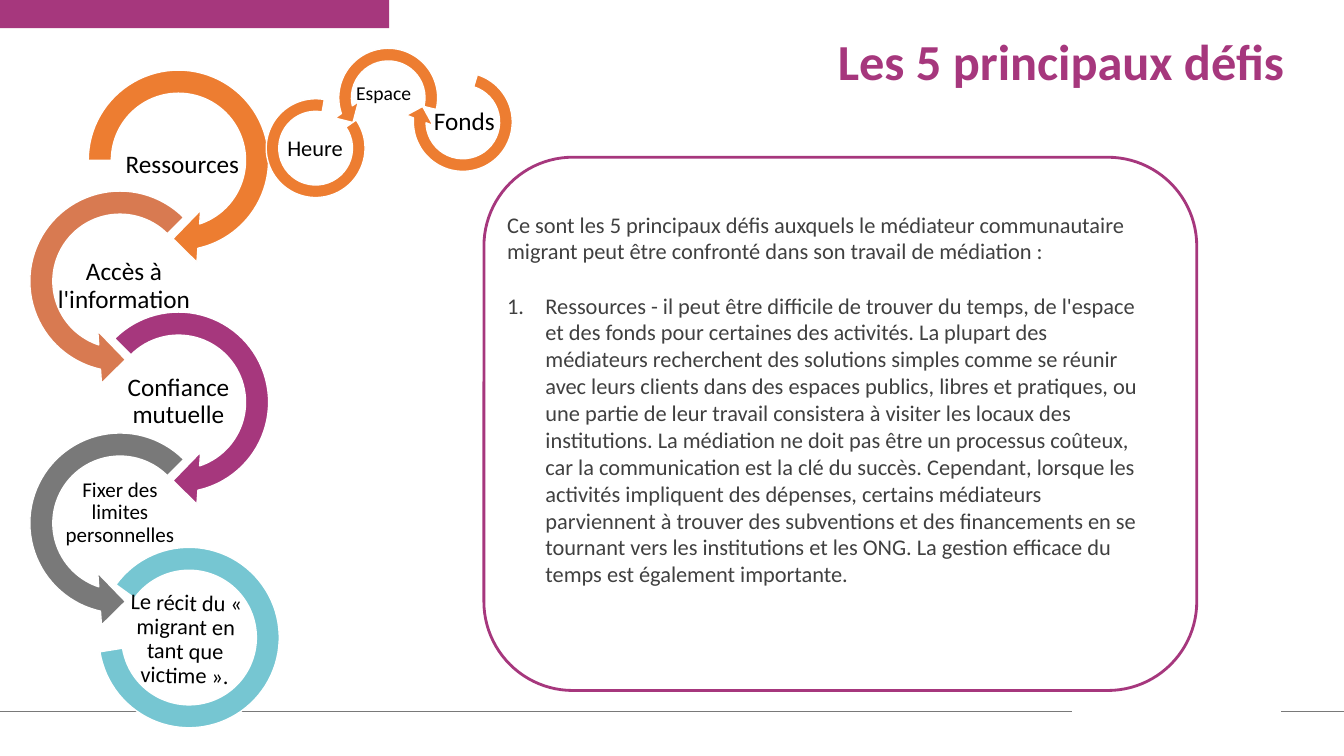
from lxml.etree import SubElement
from pptx import Presentation
from pptx.dml.color import RGBColor
from pptx.enum.shapes import MSO_CONNECTOR, MSO_SHAPE as Preset
from pptx.enum.text import MSO_ANCHOR, MSO_AUTO_SIZE, PP_ALIGN
from pptx.oxml.ns import qn
from pptx.util import Inches, Pt

PLUM = RGBColor(0xA6, 0x37, 0x7D)
ORANGE = RGBColor(0xED, 0x7D, 0x31)
COPPER = RGBColor(0xD8, 0x7A, 0x51)
GREY = RGBColor(0x79, 0x79, 0x79)
TEAL = RGBColor(0x76, 0xC6, 0xD2)
WHITE = RGBColor(0xFF, 0xFF, 0xFF)
BLACK = RGBColor(0, 0, 0)
DARK = RGBColor(0x40, 0x40, 0x40)

TITLE = "Les 5 principaux défis"
INTRO = ("Ce sont les 5 principaux défis auxquels le médiateur communautaire migrant "
         "peut être confronté dans son travail de médiation :")
CHALLENGE = (
    "Ressources - il peut être difficile de trouver du temps, de l'espace et des fonds "
    "pour certaines des activités. La plupart des médiateurs recherchent des solutions "
    "simples comme se réunir avec leurs clients dans des espaces publics, libres et "
    "pratiques, ou une partie de leur travail consistera à visiter les locaux des "
    "institutions. La médiation ne doit pas être un processus coûteux, car la "
    "communication est la clé du succès. Cependant, lorsque les activités impliquent des "
    "dépenses, certains médiateurs parviennent à trouver des subventions et des "
    "financements en se tournant vers les institutions et les ONG. La gestion efficace "
    "du temps est également importante."
)

RIGHT_START = (Preset.CIRCULAR_ARROW, (0.11, 11.42, 45, 108, 0.125))
RIGHT_NEXT = (Preset.CIRCULAR_ARROW, (0.11, 11.42, 45, 135, 0.125))
LEFT = (Preset.LEFT_CIRCULAR_ARROW, (0.11, 11.42, 63, 189, 0.125))
ARC = (Preset.BLOCK_ARC, (135, 108, 0.127))

# Each step: ring, colour, label, size, label box
CHAIN = [
    (RIGHT_START, ORANGE, "Ressources", 18, (1.23, 1.35, 1.16, 0.58)),
    (LEFT, COPPER, "Accès à l'information", 18, (0.43, 2.55, 1.6, 0.58)),
    (RIGHT_NEXT, PLUM, "Confiance mutuelle", 18, (1.19, 3.7, 1.16, 0.58)),
    (LEFT, GREY, "Fixer des limites personnelles", 15, (0.61, 4.8, 1.16, 0.58)),
]
CHAIN_LEFTS = (0.73, 0.15)
CHAIN_TOP, CHAIN_STEP, CHAIN_SIZE = 0.55, 1.2, 2.08

# Each ring: left, top, diameter, rotation, then as above, with label rotation
OTHERS = [
    (0.98, 5.43, 1.79, 350.9, ARC, TEAL, "Le récit du « migrant en tant que victime ».",
     16, (1.26, 6.06, 1.16, 0.58), 1.3),
    (4.02, 0.64, 1.14, 107.1, RIGHT_START, ORANGE, "Fonds", 18, (4.29, 1.05, 0.63, 0.32), 0),
    (3.28, 0.4, 1.14, 58.8, LEFT, ORANGE, "Espace", 14, (3.49, 0.77, 0.63, 0.32), 0),
    (2.64, 0.98, 0.98, 100.2, ARC, ORANGE, "Heure", 16, (2.81, 1.32, 0.63, 0.32), 0),
]
FOOTER_LINES = [(0, 10.63), (12.71, 13.33)]
FOOTER_Y = 7.06


def style(para, size, color, bold=False):
    for span in para.runs:
        span.font.name = "Calibri"
        span.font.size = Pt(size)
        span.font.bold = bold
        span.font.color.rgb = color


def place(shape, box):
    shape.left, shape.top, shape.width, shape.height = map(Inches, box)


def add_shape(page, preset, box, fill=None, line=None, width=1):
    shape = page.shapes.add_shape(preset, *map(Inches, box))
    shape.shadow.inherit = False
    if fill is None:
        shape.fill.background()
    else:
        shape.fill.solid()
        shape.fill.fore_color.rgb = fill
    if line is None:
        shape.line.fill.background()
    else:
        shape.line.color.rgb = line
        shape.line.width = Pt(width)
    return shape


def add_ring(page, left, top, diameter, turn, ring, color, label, size, box, label_turn):
    preset, adjustments = ring
    shape = add_shape(page, preset, (left, top, diameter, diameter), color, WHITE)
    for index, value in enumerate(adjustments):
        shape.adjustments[index] = value
    shape.rotation = turn

    caption = page.shapes.add_textbox(*map(Inches, box))
    caption.rotation = label_turn
    frame = caption.text_frame
    frame.word_wrap = True
    frame.vertical_anchor = MSO_ANCHOR.MIDDLE
    frame.margin_left = frame.margin_right = Inches(0.01)
    frame.margin_top = frame.margin_bottom = Inches(0.01)
    frame.text = label
    para = frame.paragraphs[0]
    para.alignment = PP_ALIGN.CENTER
    para.line_spacing = 0.9
    style(para, size, BLACK)


def add_footer_line(page, start, end):
    line = page.shapes.add_connector(
        MSO_CONNECTOR.STRAIGHT, *map(Inches, (start, FOOTER_Y, end, FOOTER_Y)))
    line.line.color.rgb = GREY
    line.line.width = Pt(0.5)
    SubElement(line._element.spPr, qn("a:effectLst"))


def fill_title(title):
    place(title, (8.21, 0.32, 4.95, 1.18))
    frame = title.text_frame
    frame.text = TITLE
    frame.auto_size = MSO_AUTO_SIZE.NONE
    frame.vertical_anchor = MSO_ANCHOR.TOP
    para = frame.paragraphs[0]
    para.alignment = PP_ALIGN.LEFT
    para.line_spacing = 0.9
    style(para, 36, PLUM, True)


def fill_body(body):
    place(body, (4.93, 2.04, 6.61, 4.81))
    frame = body.text_frame
    frame.auto_size = MSO_AUTO_SIZE.NONE
    frame.vertical_anchor = MSO_ANCHOR.TOP
    frame.text = INTRO
    intro, item = frame.paragraphs[0], frame.add_paragraph()
    item.text = CHALLENGE
    for para, indent, bullet, gap in ((intro, 0, "a:buNone", 0),
                                      (item, 0.38, "a:buAutoNum", 19.5)):
        properties = para._p.get_or_add_pPr()
        properties.set("marL", str(Inches(indent)))
        properties.set("indent", str(-Inches(indent)))
        mark = SubElement(properties, qn(bullet))
        if bullet == "a:buAutoNum":
            mark.set("type", "arabicPeriod")
        para.space_before = Pt(gap)
        style(para, 16, DARK)


def main():
    """Build the slide on the five main challenges."""
    deck = Presentation()
    deck.slide_width, deck.slide_height = Inches(13.33), Inches(7.5)
    page = deck.slides.add_slide(deck.slide_layouts[1])
    fill_title(page.shapes.title)
    fill_body(page.placeholders[1])
    add_shape(page, Preset.RECTANGLE, (0, 0, 3.86, 0.28), PLUM)
    for start, end in FOOTER_LINES:
        add_footer_line(page, start, end)
    for index, step in enumerate(CHAIN):
        top = CHAIN_TOP + index * CHAIN_STEP
        add_ring(page, CHAIN_LEFTS[index % 2], top, CHAIN_SIZE, 0, *step, 0)
    for ring in OTHERS:
        add_ring(page, *ring)
    add_shape(page, Preset.ROUNDED_RECTANGLE, (4.8, 1.56, 7.07, 5.29), line=PLUM, width=2)
    deck.save("out.pptx")


if __name__ == "__main__":
    main()
